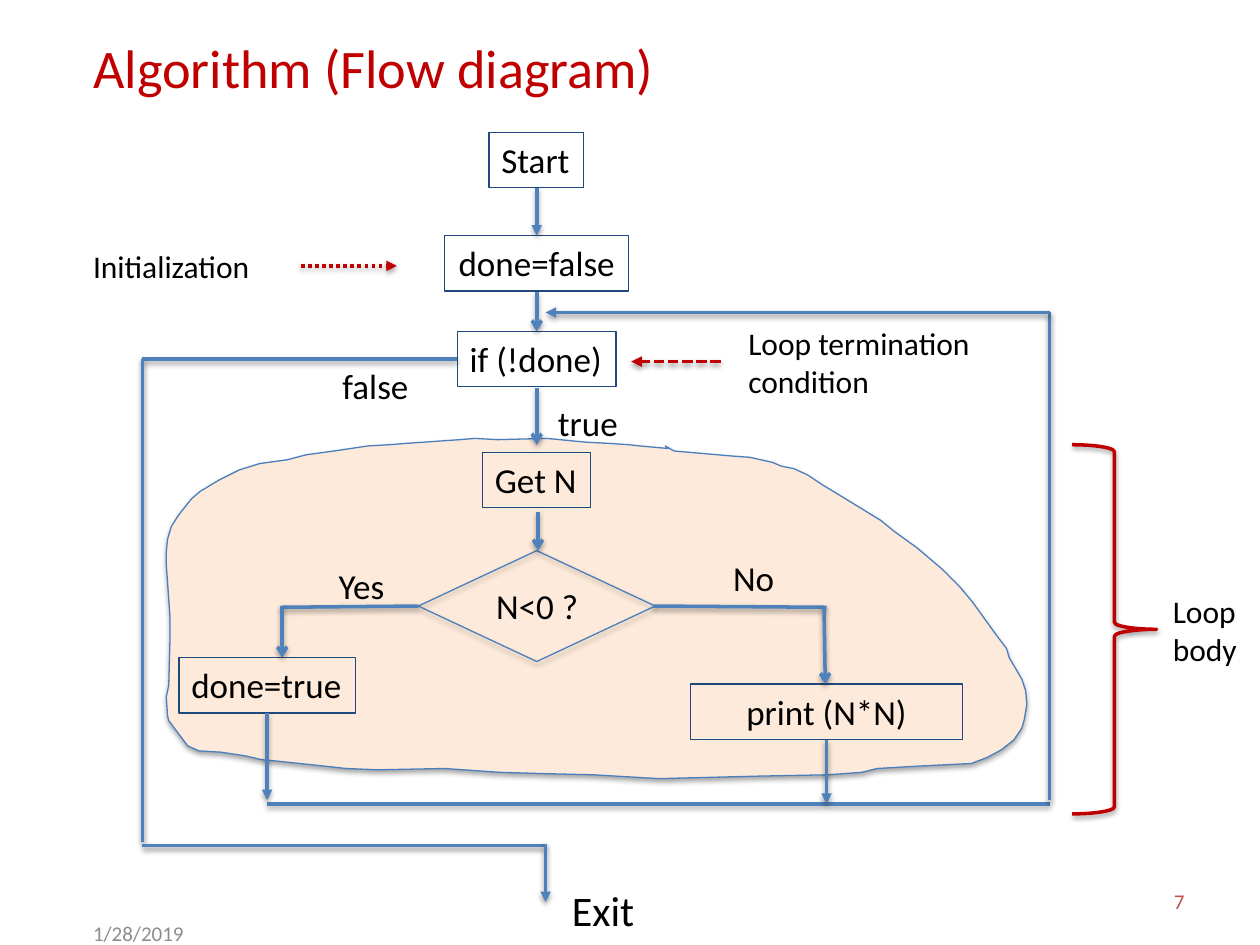
from lxml import etree
from pptx import Presentation
from pptx import util as u
from pptx.dml.color import RGBColor
from pptx.enum import dml, shapes, text
from pptx.oxml import ns

RED = RGBColor(0xC0, 0x00, 0x00)
BLUE = RGBColor(0x4F, 0x81, 0xBD)
EDGE = RGBColor(0x4B, 0x7E, 0xBC)
NAVY = RGBColor(0x1F, 0x49, 0x7D)
PEACH = RGBColor(0xFD, 0xEA, 0xDA)
BLACK = RGBColor(0x00, 0x00, 0x00)
GRAY = RGBColor(0x8C, 0x8C, 0x8C)
ROSE = RGBColor(0xC0, 0x50, 0x4D)

SHAPE = shapes.MSO_SHAPE
LEFT, CENTER, RIGHT = text.PP_ALIGN.LEFT, text.PP_ALIGN.CENTER, text.PP_ALIGN.RIGHT
TOP, MIDDLE = text.MSO_ANCHOR.TOP, text.MSO_ANCHOR.MIDDLE

# Outline of the loop body, in hundredths of an inch
BODY_OUTLINE = [
    (530, 356), (508, 354), (499, 353), (484, 352), (465, 351), (434, 348),
    (395, 349), (377, 348), (365, 349), (322, 352), (309, 353), (292, 354),
    (272, 357), (265, 358), (243, 361), (228, 365), (206, 368), (190, 373),
    (174, 381), (159, 390), (152, 396), (144, 406), (141, 410), (136, 418),
    (133, 428), (132, 438), (132, 448), (133, 462), (135, 490), (135, 506),
    (134, 544), (132, 553), (133, 568), (134, 572), (143, 584), (149, 592),
    (158, 596), (175, 597), (195, 600), (208, 603), (219, 604), (238, 606),
    (257, 608), (275, 610), (300, 611), (353, 610), (397, 613), (430, 614),
    (471, 615), (523, 618), (603, 616), (657, 615), (684, 613), (696, 610),
    (730, 608), (771, 606), (784, 601), (795, 595), (805, 587), (811, 578),
    (813, 571), (815, 559), (814, 548), (811, 539), (801, 522), (799, 515),
    (790, 503), (772, 478), (762, 466), (748, 452), (728, 435), (710, 422),
    (699, 413), (663, 391), (653, 385), (641, 377), (630, 372), (620, 370),
    (613, 367), (595, 363), (581, 362), (535, 358), (528, 354),
]


def write(frame, words, size=20, color=BLACK, align=LEFT, anchor=TOP, wrap=False):
    frame.word_wrap = wrap
    frame.auto_size = text.MSO_AUTO_SIZE.NONE
    frame.vertical_anchor = anchor
    for index, line in enumerate(words.split("\n")):
        para = frame.add_paragraph() if index else frame.paragraphs[0]
        para.alignment = align
        span = para.add_run()
        span.text = line
        span.font.name = "Calibri"
        span.font.size = u.Pt(size)
        span.font.color.rgb = color


def add_shadow(item, opacity=38, distance=1.6):
    properties = item._element.spPr
    effects = properties.find(ns.qn("a:effectLst"))
    if effects is None:
        effects = etree.SubElement(properties, ns.qn("a:effectLst"))
    shadow = etree.SubElement(
        effects, ns.qn("a:outerShdw"), blurRad=str(u.Pt(3.1)),
        dist=str(u.Pt(distance)), dir="5400000", rotWithShape="0")
    black = etree.SubElement(shadow, ns.qn("a:srgbClr"), val="000000")
    etree.SubElement(black, ns.qn("a:alpha"), val=str(opacity * 1000))


class FlowSlide:
    def __init__(self, deck):
        self.page = deck.slides.add_slide(deck.slide_layouts[5])
        self.items = self.page.shapes

    def title(self, words, *place):
        holder = self.items.title
        holder.left, holder.top, holder.width, holder.height = map(u.Inches, place)
        write(holder.text_frame, words, size=31, color=RED, wrap=True)

    def label(self, words, *place, **style):
        box = self.items.add_textbox(*map(u.Inches, place))
        write(box.text_frame, words, **style)

    def paint(self, shape, color, weight, fill=None):
        shape.shadow.inherit = False
        if fill is None:
            shape.fill.background()
        else:
            shape.fill.solid()
            shape.fill.fore_color.rgb = fill
        shape.line.color.rgb = color
        shape.line.width = u.Pt(weight)

    def outline(self, kind, *place, color=NAVY, weight=0.75):
        shape = self.items.add_shape(kind, *map(u.Inches, place))
        self.paint(shape, color, weight)
        return shape

    def step(self, words, left, top, width, align=LEFT):
        box = self.outline(SHAPE.RECTANGLE, left, top, width, 0.44)
        write(box.text_frame, words, align=align)

    def region(self, points):
        builder = self.items.build_freeform(*points[0], scale=u.Inches(0.01))
        builder.add_line_segments(points[1:], close=True)
        shape = builder.convert_to_shape()
        self.paint(shape, EDGE, 0.75, fill=PEACH)
        add_shadow(shape, 35, 1.8)

    def line(self, *ends, tip=None, color=BLUE, dash=None):
        line = self.items.add_connector(
            shapes.MSO_CONNECTOR.STRAIGHT, *map(u.Inches, ends))
        line.line.color.rgb = color
        line.line.width = u.Pt(2)
        if dash is not None:
            line.line.dash_style = dash
        if tip:
            stroke = line._element.spPr.find(ns.qn("a:ln"))
            etree.SubElement(stroke, ns.qn("a:tailEnd"), type=tip)
        add_shadow(line)


def main():
    deck = Presentation()
    deck.slide_width, deck.slide_height = u.Inches(10), u.Inches(7.5)
    flow = FlowSlide(deck)

    # Loop body and its brace
    flow.region(BODY_OUTLINE)
    flow.label("Loop\nbody", 9.21, 4.65, 0.77, 0.71, size=18)
    brace = flow.outline(SHAPE.RIGHT_BRACE, 8.51, 3.53, 0.67, 2.93, color=RED, weight=2)
    add_shadow(brace)

    # Title, date and slide number
    flow.title("Algorithm (Flow diagram)", 0.64, 0.22, 8.36, 0.62)
    flow.label("1/28/2019", 0.64, 7.21, 2.33, 0.4, size=12, color=GRAY,
               anchor=MIDDLE, wrap=True)
    flow.label("7", 7.17, 6.95, 2.33, 0.4, size=12, color=ROSE,
               align=RIGHT, anchor=MIDDLE, wrap=True)

    # Steps
    for words, left, top, width, align in [
        ("Start", 3.88, 1.05, 0.75, LEFT),
        ("done=false", 3.53, 1.87, 1.46, CENTER),
        ("if (!done)", 3.63, 2.63, 1.26, LEFT),
        ("Get N", 3.83, 3.59, 0.86, LEFT),
        ("done=true", 1.42, 5.22, 1.4, LEFT),
        ("print (N*N)", 5.48, 5.43, 2.16, CENTER),
    ]:
        flow.step(words, left, top, width, align)

    # Decision and branch labels
    diamond = flow.outline(SHAPE.DIAMOND, 3.32, 4.37, 1.88, 0.88, color=EDGE)
    add_shadow(diamond, 35, 1.8)
    for words, left, top, width in [
        ("N<0 ?", 3.84, 4.59, 0.86),
        ("Yes", 2.59, 4.43, 0.57),
        ("No", 5.72, 4.37, 0.53),
        ("true", 4.33, 3.14, 0.68),
        ("false", 2.62, 2.84, 0.73),
    ]:
        flow.label(words, left, top, width, 0.44)
    flow.label("Exit", 4.44, 6.97, 0.7, 0.5, size=24)

    # Flow lines: plain, open-headed and solid-headed
    for tip, routes in {
        None: [
            (3.32, 4.81, 2.23, 4.82), (5.19, 4.81, 6.56, 4.82),
            (2.12, 6.38, 8.33, 6.38), (8.33, 6.35, 8.33, 2.48),
            (3.63, 2.85, 1.13, 2.85), (1.13, 2.85, 1.13, 6.68),
            (1.13, 6.71, 4.33, 6.71),
        ],
        "arrow": [
            (4.26, 2.32, 4.26, 2.63), (4.26, 3.08, 4.26, 3.53),
            (4.27, 4.06, 4.27, 4.37), (2.24, 4.81, 2.24, 5.22),
            (6.54, 4.81, 6.55, 5.43),
        ],
        "triangle": [
            (4.26, 1.49, 4.26, 1.87), (8.33, 2.48, 4.33, 2.48),
            (6.56, 5.87, 6.56, 6.38), (2.12, 5.66, 2.12, 6.35),
            (4.33, 6.7, 4.33, 7.16),
        ],
    }.items():
        for route in routes:
            flow.line(*route, tip=tip)

    # Remarks
    flow.label("Initialization", 0.64, 1.91, 1.75, 0.4, size=18, wrap=True)
    flow.line(2.39, 2.11, 3.15, 2.11, tip="triangle", color=RED,
              dash=dml.MSO_LINE.ROUND_DOT)
    flow.label("Loop termination\ncondition", 5.84, 2.52, 1.98, 0.71, size=18)
    flow.line(5.72, 2.87, 5.01, 2.87, tip="triangle", color=RED,
              dash=dml.MSO_LINE.SQUARE_DOT)

    deck.save("out.pptx")


if __name__ == "__main__":
    main()
